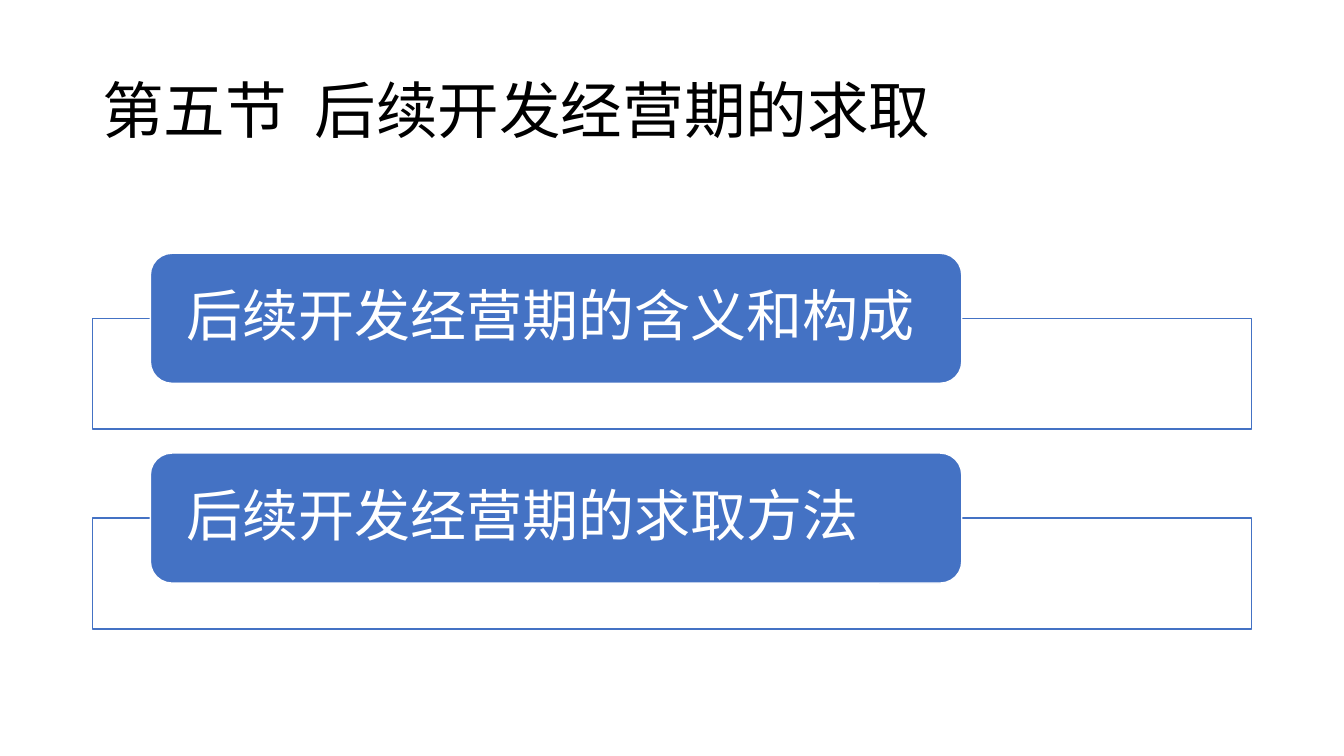
from dataclasses import dataclass

from lxml import etree
from pptx import Presentation
from pptx.dml.color import RGBColor
from pptx.enum.shapes import MSO_SHAPE
from pptx.enum.text import MSO_ANCHOR, PP_ALIGN
from pptx.oxml.ns import qn
from pptx.util import Pt

RECTANGLE = MSO_SHAPE.RECTANGLE
ROUNDED = MSO_SHAPE.ROUNDED_RECTANGLE
MIDDLE = MSO_ANCHOR.MIDDLE
LEFT = PP_ALIGN.LEFT


@dataclass(frozen=True)
class Theme:
    font: str = "Noto Sans CJK SC"
    title_size: int = 44
    topic_size: int = 40
    line_width: int = 1
    ink: RGBColor = RGBColor(0x00, 0x00, 0x00)
    paper: RGBColor = RGBColor(0xFF, 0xFF, 0xFF)
    accent: RGBColor = RGBColor(0x44, 0x72, 0xC4)


THEME = Theme()
TITLE = "第五节  后续开发经营期的求取"
TOPICS = ["后续开发经营期的含义和构成", "后续开发经营期的求取方法"]


def write_line(frame, text, size, color, side_inset, end_inset):
    frame.word_wrap = True
    frame.vertical_anchor = MIDDLE
    frame.margin_left = frame.margin_right = Pt(side_inset)
    frame.margin_top = frame.margin_bottom = Pt(end_inset)
    paragraph = frame.paragraphs[0]
    paragraph.text = text
    paragraph.alignment = LEFT
    paragraph.line_spacing = 0.9
    font = paragraph.font
    font.size = Pt(size)
    font.color.rgb = color
    font.name = THEME.font
    latin = next(paragraph._p.iter(qn("a:latin")))
    latin.addnext(latin.makeelement(qn("a:ea"), {"typeface": THEME.font}))


def add_panel(slide, kind, box, fill, line):
    panel = slide.shapes.add_shape(kind, *map(Pt, box))
    panel.shadow.inherit = False
    panel.fill.solid()
    panel.fill.fore_color.rgb = fill
    panel.line.color.rgb = line
    panel.line.width = Pt(THEME.line_width)
    return panel


def add_title(slide, box):
    title = slide.shapes.add_textbox(*map(Pt, box))
    write_line(title.text_frame, TITLE, THEME.title_size, THEME.ink, 7.2, 3.6)


def add_topic(slide, box, text):
    """Place a label over the middle of the top edge of an outlined frame."""
    left, top, width, height = box
    label_height = 92.9
    frame_top = top + label_height / 2
    frame_box = (left, frame_top, width, top + height - frame_top)
    outline = add_panel(slide, RECTANGLE, frame_box, THEME.paper, THEME.accent)
    fill_color = next(outline._element.spPr.iter(qn("a:srgbClr")))
    etree.SubElement(fill_color, qn("a:alpha"), val="90000")

    label_box = (left + 0.05 * width, top, 0.7 * width, label_height)
    label = add_panel(slide, ROUNDED, label_box, THEME.accent, THEME.paper)
    write_line(label.text_frame, text, THEME.topic_size, THEME.paper, 21.6, 0)


def add_topic_list(slide, box, gap):
    left, top, width, height = box
    row_height = (height - gap * (len(TOPICS) - 1)) / len(TOPICS)
    for row, topic in enumerate(TOPICS):
        row_top = top + row * (row_height + gap)
        add_topic(slide, (left, row_top, width, row_height), topic)


def main():
    deck = Presentation()
    deck.slide_width, deck.slide_height = Pt(960), Pt(540)
    slide = deck.slides.add_slide(deck.slide_layouts[6])
    add_title(slide, (66, 28.75, 828, 104.4))
    add_topic_list(slide, (66, 180.9, 828, 268.4), gap=17)
    deck.save("out.pptx")


if __name__ == "__main__":
    main()
